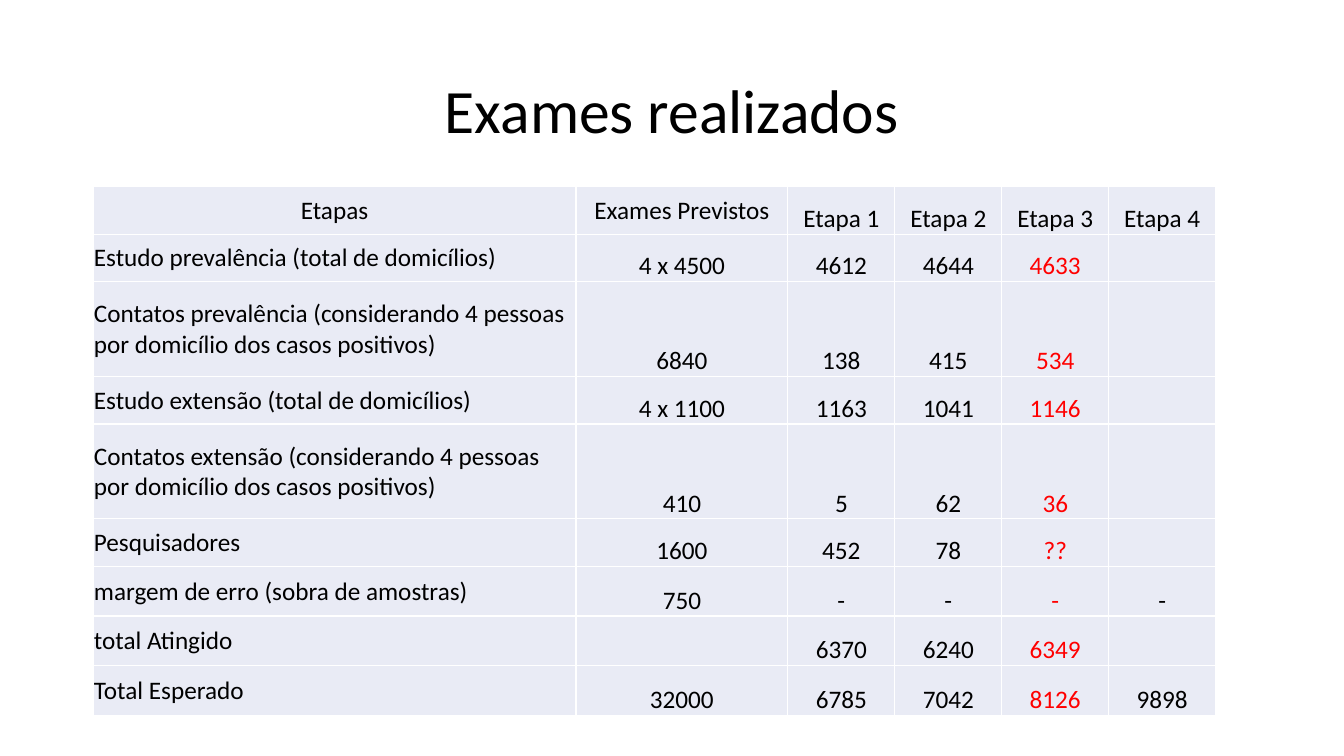
"""Build the slide with the table of exams carried out per stage."""
from lxml import etree
from pptx import Presentation
from pptx.dml.color import RGBColor
from pptx.enum.text import MSO_ANCHOR, PP_ALIGN
from pptx.oxml.ns import qn
from pptx.util import Pt

CENTER, LEFT = PP_ALIGN.CENTER, PP_ALIGN.LEFT
MIDDLE, BOTTOM = MSO_ANCHOR.MIDDLE, MSO_ANCHOR.BOTTOM
TITLE_ONLY = 5
FONT = "Calibri"
COLORS = {"text": "000000", "stage3": "FF0000", "cell": "E9EBF5", "border": "FFFFFF"}

EXAMS = [
    ("Etapas", "Exames Previstos", "Etapa 1", "Etapa 2", "Etapa 3", "Etapa 4"),
    ("Estudo prevalência (total de domicílios)", "4 x 4500", "4612", "4644", "4633", ""),
    ("Contatos prevalência (considerando 4 pessoas por domicílio dos casos positivos)",
     "6840", "138", "415", "534", ""),
    ("Estudo extensão (total de domicílios)", "4 x 1100", "1163", "1041", "1146", ""),
    ("Contatos extensão (considerando 4 pessoas por domicílio dos casos positivos)",
     "410", "5", "62", "36", ""),
    ("Pesquisadores", "1600", "452", "78", "??", ""),
    ("margem de erro (sobra de amostras)", "750", " - ", " - ", " - ", " - "),
    ("total Atingido", "", "6370", "6240", "6349", ""),
    ("Total Esperado", "32000", "6785", "7042", "8126", "9898"),
]
COLUMN_WIDTHS = [344.9, 151.4] + [76.4] * 4
ROW_HEIGHTS = [33.9, 33.9, 67.8, 33.9, 67.8, 33.9, 35.5, 35.5, 35.5]


def style_text(paragraph, size, color, alignment):
    paragraph.alignment = alignment
    for run in paragraph.runs:
        run.font.size = Pt(size)
        run.font.name = FONT
        run.font.color.rgb = RGBColor.from_string(color)


def add_borders(cell):
    properties = cell._tc.get_or_add_tcPr()
    for side in ("a:lnL", "a:lnR", "a:lnT", "a:lnB"):
        line = etree.SubElement(properties, qn(side), w=str(Pt(1)))
        fill = etree.SubElement(line, qn("a:solidFill"))
        etree.SubElement(fill, qn("a:srgbClr"), val=COLORS["border"])


prs = Presentation()
prs.slide_width, prs.slide_height = Pt(960), Pt(540)
slide = prs.slides.add_slide(prs.slide_layouts[TITLE_ONLY])

title = slide.shapes.title
title.left, title.top, title.width, title.height = Pt(66), Pt(28.8), Pt(828), Pt(104.4)
title.text_frame.text = "Exames realizados"
title.text_frame.vertical_anchor = MIDDLE
heading = title.text_frame.paragraphs[0]
heading.line_spacing = 0.9
style_text(heading, 44, COLORS["text"], CENTER)

exams = slide.shapes.add_table(
    len(EXAMS), len(COLUMN_WIDTHS), Pt(66.5), Pt(133.4),
    Pt(sum(COLUMN_WIDTHS)), Pt(sum(ROW_HEIGHTS))).table
exams.first_row = False
exams.horz_banding = False
for column, width in zip(exams.columns, COLUMN_WIDTHS):
    column.width = Pt(width)
for row, height in zip(exams.rows, ROW_HEIGHTS):
    row.height = Pt(height)

for r, values in enumerate(EXAMS):
    for c, value in enumerate(values):
        cell = exams.cell(r, c)
        add_borders(cell)
        cell.fill.solid()
        cell.fill.fore_color.rgb = RGBColor.from_string(COLORS["cell"])
        cell.margin_left = cell.margin_right = cell.margin_top = Pt(0.6)
        cell.margin_bottom = Pt(0)
        cell.vertical_anchor = MIDDLE if c == 0 or (r == 0 and c == 1) else BOTTOM
        cell.text_frame.text = value
        color = COLORS["stage3"] if c == 4 and r > 0 else COLORS["text"]
        alignment = LEFT if c == 0 and r > 0 else CENTER
        style_text(cell.text_frame.paragraphs[0], 18, color, alignment)

prs.save("out.pptx")
